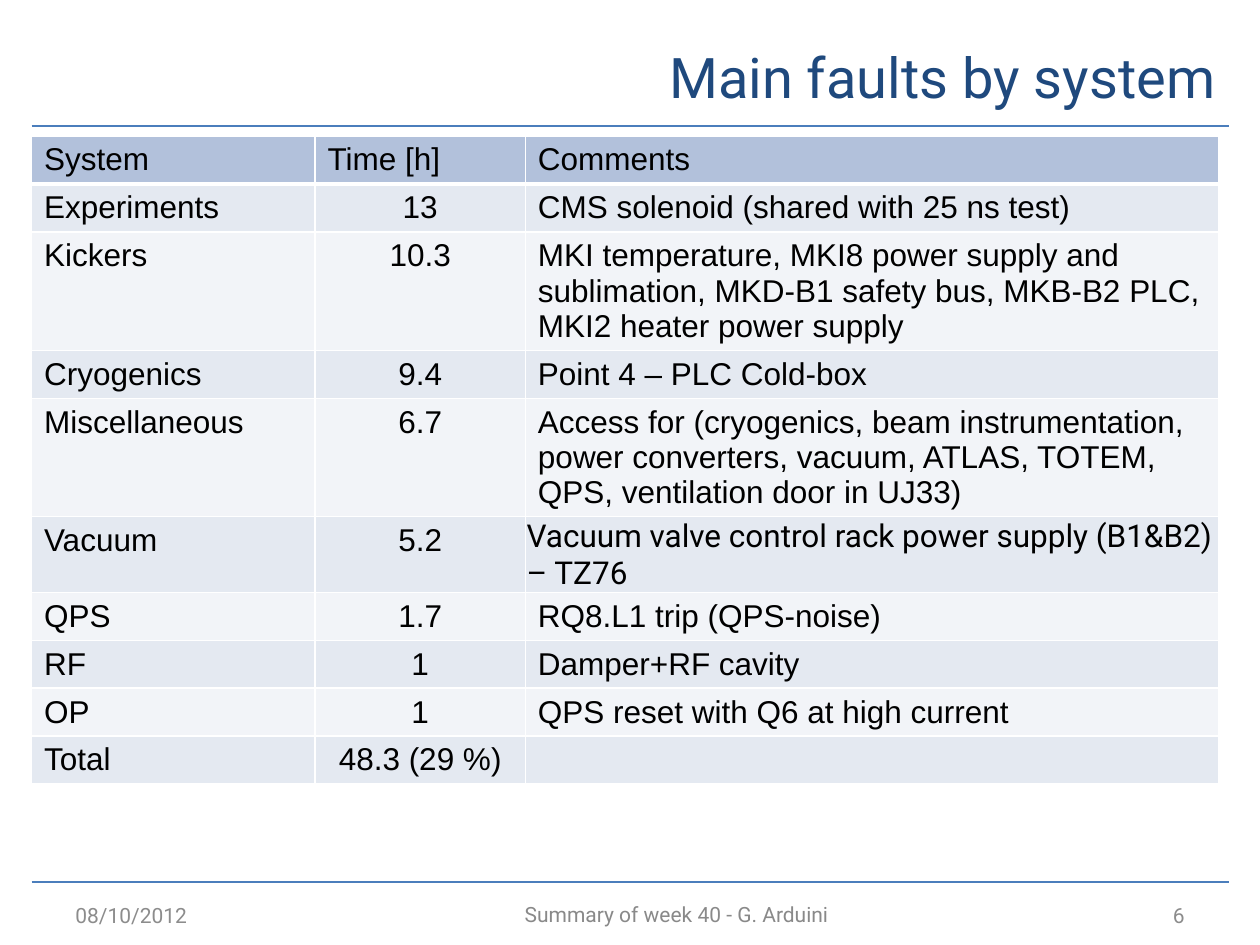
from dataclasses import dataclass

from lxml.etree import SubElement
from pptx import Presentation
from pptx.dml.color import RGBColor
from pptx.enum.shapes import MSO_CONNECTOR
from pptx.enum.text import MSO_ANCHOR, PP_ALIGN
from pptx.oxml.ns import qn
from pptx.util import Emu, Inches, Pt

WIDTH, HEIGHT = Inches(10), Inches(7.5)
MARGIN = 0.025
RULE_COLOUR = "4B7EBC"
HEADER_FILL = "B2C1DB"
BAND_FILLS = ("E4E9F1", "F2F4F8")
COLUMN_WIDTHS = (2.25, 1.67, 5.5)
ROW_HEIGHTS = {1: 0.38, 2: 0.6, 3: 0.94}


@dataclass
class Fault:
    system: str
    time: str
    comment: str
    lines: int = 1
    tight: bool = False


@dataclass
class Label:
    text: str
    left: float
    top: float
    width: float
    height: float
    size: int
    colour: str
    align: PP_ALIGN


FAULTS = [
    Fault("System", "Time [h]", "Comments"),
    Fault("Experiments", "13", "CMS solenoid (shared with 25 ns test)"),
    Fault("Kickers", "10.3", "MKI temperature, MKI8 power supply and sublimation, "
          "MKD-B1 safety bus, MKB-B2 PLC, MKI2 heater power supply", lines=3),
    Fault("Cryogenics", "9.4", "Point 4 – PLC Cold-box"),
    Fault("Miscellaneous", "6.7", "Access for (cryogenics, beam instrumentation, "
          "power converters, vacuum, ATLAS, TOTEM, QPS, ventilation door in UJ33)", lines=3),
    Fault("Vacuum", "5.2", "Vacuum valve control rack power supply (B1&B2) – TZ76",
          lines=2, tight=True),
    Fault("QPS", "1.7", "RQ8.L1 trip (QPS-noise)"),
    Fault("RF", "1", "Damper+RF cavity"),
    Fault("OP", "1", "QPS reset with Q6 at high current"),
    Fault("Total", "48.3 (29 %)", ""),
]

LABELS = [
    Label("Main faults by system", 0.175, 0.023, 0.8, 0.116, 32, "1F497D", PP_ALIGN.RIGHT),
    Label("08/10/2012", 0.05, 0.956, 0.233, 0.024, 12, "8C8C8C", PP_ALIGN.LEFT),
    Label("Summary of week 40 - G. Arduini", 0.183, 0.956, 0.708, 0.023, 12, "898989",
          PP_ALIGN.CENTER),
    Label("6", 0.717, 0.956, 0.233, 0.024, 12, "8C8C8C", PP_ALIGN.RIGHT),
]


def rgb(colour: str) -> RGBColor:
    return RGBColor.from_string(colour)


def across(share: float) -> Emu:
    return Emu(round(WIDTH * share))


def down(share: float) -> Emu:
    return Emu(round(HEIGHT * share))


def style(paragraph, face: str, size: int, colour: str, align: PP_ALIGN) -> None:
    paragraph.alignment = align
    paragraph.font.name = face
    paragraph.font.size = Pt(size)
    paragraph.font.color.rgb = rgb(colour)


def draw_rule(slide, top: float) -> None:
    rule = slide.shapes.add_connector(
        MSO_CONNECTOR.STRAIGHT, across(MARGIN), down(top), across(1 - MARGIN), down(top))
    rule.line.color.rgb = rgb(RULE_COLOUR)
    rule.line.width = Pt(1.5)
    SubElement(rule.element.spPr, qn("a:effectLst"))


def draw_label(slide, label: Label) -> None:
    box = slide.shapes.add_textbox(
        across(label.left), down(label.top), across(label.width), down(label.height))
    frame = box.text_frame
    frame.word_wrap = True
    frame.vertical_anchor = MSO_ANCHOR.MIDDLE
    frame.text = label.text
    style(frame.paragraphs[0], "Roboto", label.size, label.colour, label.align)


def draw_borders(cell, bottom_width: int) -> None:
    properties = cell._tc.get_or_add_tcPr()
    for side, width in (("L", 1), ("R", 1), ("T", 1), ("B", bottom_width)):
        border = SubElement(properties, qn(f"a:ln{side}"), w=str(Pt(width)))
        SubElement(SubElement(border, qn("a:solidFill")), qn("a:srgbClr"), val="FFFFFF")


def fill_cell(cell, text: str, face: str, fill: str, align: PP_ALIGN, bottom_width: int) -> None:
    draw_borders(cell, bottom_width)
    cell.fill.solid()
    cell.fill.fore_color.rgb = rgb(fill)
    cell.text = text
    style(cell.text_frame.paragraphs[0], face, 18, "000000", align)


def draw_faults(slide, faults: list[Fault]) -> None:
    heights = [ROW_HEIGHTS[fault.lines] for fault in faults]
    table = slide.shapes.add_table(
        len(faults), len(COLUMN_WIDTHS), across(MARGIN), down(0.144),
        Inches(sum(COLUMN_WIDTHS)), Inches(sum(heights))).table
    for column, width in zip(table.columns, COLUMN_WIDTHS):
        column.width = Inches(width)
    for index, (fault, height) in enumerate(zip(faults, heights)):
        table.rows[index].height = Inches(height)
        is_header = index == 0
        fill = HEADER_FILL if is_header else BAND_FILLS[(index - 1) % 2]
        bottom_width = 3 if is_header else 1
        time_align = PP_ALIGN.LEFT if is_header else PP_ALIGN.CENTER
        comment_face = "Roboto" if fault.tight else "Arial"
        system, time, comment = table.rows[index].cells
        fill_cell(system, fault.system, "Arial", fill, PP_ALIGN.LEFT, bottom_width)
        fill_cell(time, fault.time, "Arial", fill, time_align, bottom_width)
        fill_cell(comment, fault.comment, comment_face, fill, PP_ALIGN.LEFT, bottom_width)
        if fault.tight:
            comment.vertical_anchor = MSO_ANCHOR.MIDDLE
            comment.margin_left = comment.margin_right = comment.margin_top = Inches(0.01)
            comment.margin_bottom = 0


def main() -> None:
    presentation = Presentation()
    presentation.slide_width, presentation.slide_height = WIDTH, HEIGHT
    slide = presentation.slides.add_slide(presentation.slide_layouts[6])
    for top in (2 / 15, 14 / 15):
        draw_rule(slide, top)
    draw_faults(slide, FAULTS)
    for label in LABELS:
        draw_label(slide, label)
    presentation.save("out.pptx")


if __name__ == "__main__":
    main()
